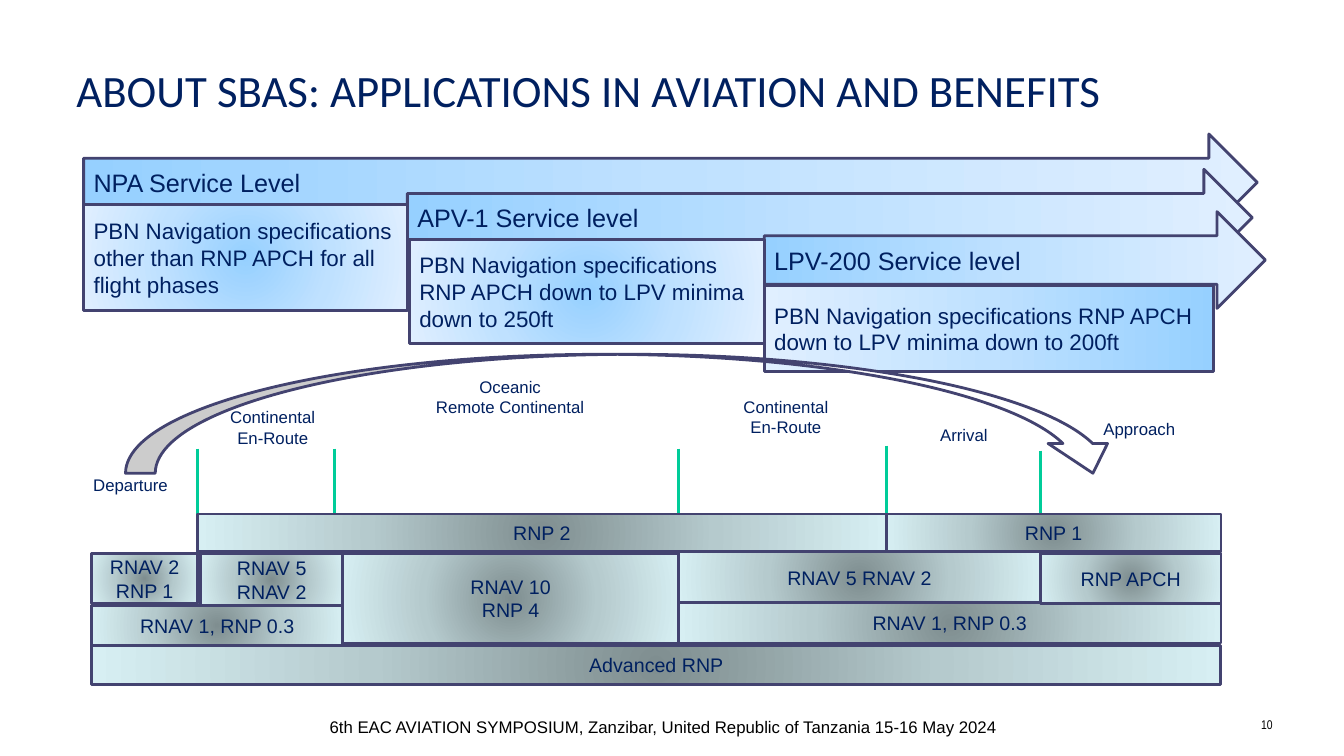
from lxml.etree import SubElement
from pptx import Presentation
from pptx.dml.color import RGBColor as RGB
from pptx.enum.shapes import MSO_CONNECTOR as CONN, MSO_SHAPE as KIND
from pptx.enum.text import MSO_ANCHOR as ANCHOR, PP_ALIGN as ALIGN
from pptx.oxml import parse_xml
from pptx.oxml.ns import nsdecls, qn
from pptx.util import Inches, Pt

HUES = {"navy": "002060", "edge": "434370", "mark": "00CC99", "black": "000000", "white": "FFFFFF"}
FADES = {"sky": ("96D0FF", "BFE1FF", "E0EFFF"), "steel": ("7F8E90", "B5CACD", "D7EFF3")}
RADIAL = '<a:path path="circle"><a:fillToRect l="50000" t="50000" r="50000" b="50000"/></a:path>'
RIGHT = '<a:lin ang="0" scaled="0"/>'
LEFT = '<a:lin ang="10800000" scaled="0"/>'


class Board:
    """Draws styled elements on a slide grid whose columns and rows are a tenth of an inch."""

    def __init__(self, deck):
        self.slide = deck.slides.add_slide(deck.slide_layouts[6])
        self.font = "Arial"
        self.cell = Inches(0.1)

    def grid(self, *cells):
        return [round(c * self.cell) for c in cells]

    def letter(self, item, text, size, hue="navy", align=ALIGN.LEFT, font=None):
        frame = item.text_frame
        frame.text = text
        for para in frame.paragraphs:
            para.alignment = align
            para.font.size = Pt(size)
            para.font.name = font or self.font
            para.font.color.rgb = RGB.from_string(HUES[hue])
        return frame

    def label(self, box, text, size=12, wrap=False, anchor=ANCHOR.TOP, **style):
        item = self.slide.shapes.add_textbox(*self.grid(*box))
        frame = self.letter(item, text, size, **style)
        frame.word_wrap = wrap
        frame.vertical_anchor = anchor

    def shape(self, kind, box):
        item = self.slide.shapes.add_shape(kind, *self.grid(*box))
        item.shadow.inherit = False
        item.line.color.rgb = RGB.from_string(HUES["edge"])
        item.line.width = Pt(2)
        return item

    def panel(self, kind, box, text, size, fade, flow, align=ALIGN.LEFT):
        item = self.shape(kind, box)
        item.fill.gradient()
        stops = "".join(
            f'<a:gs pos="{n * 50000}"><a:srgbClr val="{hue}"/></a:gs>'
            for n, hue in enumerate(FADES[fade])
        )
        props = item._element.spPr
        props.replace(
            props.find(qn("a:gradFill")),
            parse_xml(f'<a:gradFill {nsdecls("a")} rotWithShape="1"><a:gsLst>{stops}</a:gsLst>{flow}</a:gradFill>'),
        )
        frame = self.letter(item, text, size, align=align)
        frame.word_wrap = True
        frame.vertical_anchor = ANCHOR.MIDDLE

    def arc(self, box):
        item = self.shape(KIND.CURVED_DOWN_ARROW, box)
        item.fill.solid()
        item.fill.fore_color.rgb = RGB.from_string(HUES["white"])

    def mark(self, col, top, end):
        line = self.slide.shapes.add_connector(CONN.STRAIGHT, *self.grid(col, top, col, end))
        line.line.color.rgb = RGB.from_string(HUES["mark"])
        line.line.width = Pt(2.25)
        SubElement(line._element.spPr, qn("a:effectLst"))


def main():
    deck = Presentation()
    deck.slide_width, deck.slide_height = Inches(13.33), Inches(7.5)
    board = Board(deck)

    board.label((31.7, 70.6, 90.2, 3),
                "6th EAC AVIATION SYMPOSIUM, Zanzibar, United Republic of Tanzania 15-16 May 2024",
                wrap=True, hue="black")
    board.label((6.6, 1.4, 119.8, 15), "ABOUT SBAS: APPLICATIONS IN AVIATION AND BENEFITS",
                32, wrap=True, anchor=ANCHOR.MIDDLE, font="Calibri")
    board.label((96.1, 70.6, 31.1, 2.5), "10", 9, wrap=True, hue="black",
                align=ALIGN.RIGHT, font="Arial Narrow")

    for left, top, wide, text in (
        (8.3, 13.3, 116.4, "NPA Service Level"),
        (40.4, 16.8, 83.8, "APV-1 Service level"),
        (75.8, 21, 49.7, "LPV-200 Service level"),
    ):
        board.panel(KIND.RIGHT_ARROW, (left, top, wide, 9.6), text, 18, "sky", RIGHT)

    for box, flow, text in (
        ((8.3, 20.3, 32.1, 10.5), RADIAL, "other than RNP APCH for all flight phases"),
        ((40.6, 23.8, 35.2, 10.3), RADIAL, "RNP APCH down to LPV minima down to 250ft"),
        ((75.8, 28.3, 44.6, 8.6), LEFT, "RNP APCH down to LPV minima down to 200ft"),
    ):
        board.panel(KIND.RECTANGLE, box, f"PBN Navigation specifications {text}", 16, "sky", flow)

    for col, top, end in (
        (19.6, 44.5, 55), (33.2, 44.5, 55), (87.9, 44.2, 54.7), (67.3, 44.5, 55), (103.2, 44.7, 66.8),
    ):
        board.mark(col, top, end)

    for left, top, right, end, text in (
        (19.6, 51, 87.9, 54.7, "RNP 2"),
        (87.9, 51, 121.1, 54.7, "RNP 1"),
        (9.1, 54.9, 19.6, 59.9, "RNAV 2 RNP 1"),
        (19.9, 54.9, 34, 60.1, "RNAV 5 RNAV 2"),
        (9.1, 60.1, 34, 64, "RNAV 1, RNP 0.3"),
        (34, 54.9, 67.3, 63.8, "RNAV 10\nRNP 4"),
        (67.3, 54.7, 103.2, 59.9, "RNAV 5 RNAV 2"),
        (67.3, 59.8, 121.1, 63.8, "RNAV 1, RNP 0.3"),
        (103.2, 54.9, 121.1, 59.9, "RNP APCH"),
        (9.1, 64, 121.1, 67.9, "Advanced RNP"),
    ):
        box = (left, top, right - left, end - top)
        board.panel(KIND.RECTANGLE, box, text, 14, "steel", RADIAL, ALIGN.CENTER)

    for box, text in (
        ((21.8, 39.9, 10.5, 5), "Continental\nEn-Route"),
        ((42.2, 36.9, 16.8, 5), "Oceanic\nRemote Continental"),
        ((72.7, 38.9, 10.5, 5), "Continental\nEn-Route"),
        ((92.2, 41.6, 6.8, 3), "Arrival"),
        ((108.4, 41.1, 9.2, 3), "Approach"),
        ((8.2, 46.6, 9.5, 3), "Departure"),
    ):
        board.label(box, text, align=ALIGN.CENTER)
    board.arc((12.45, 35.15, 98.9, 11.8))

    deck.save("out.pptx")


if __name__ == "__main__":
    main()
